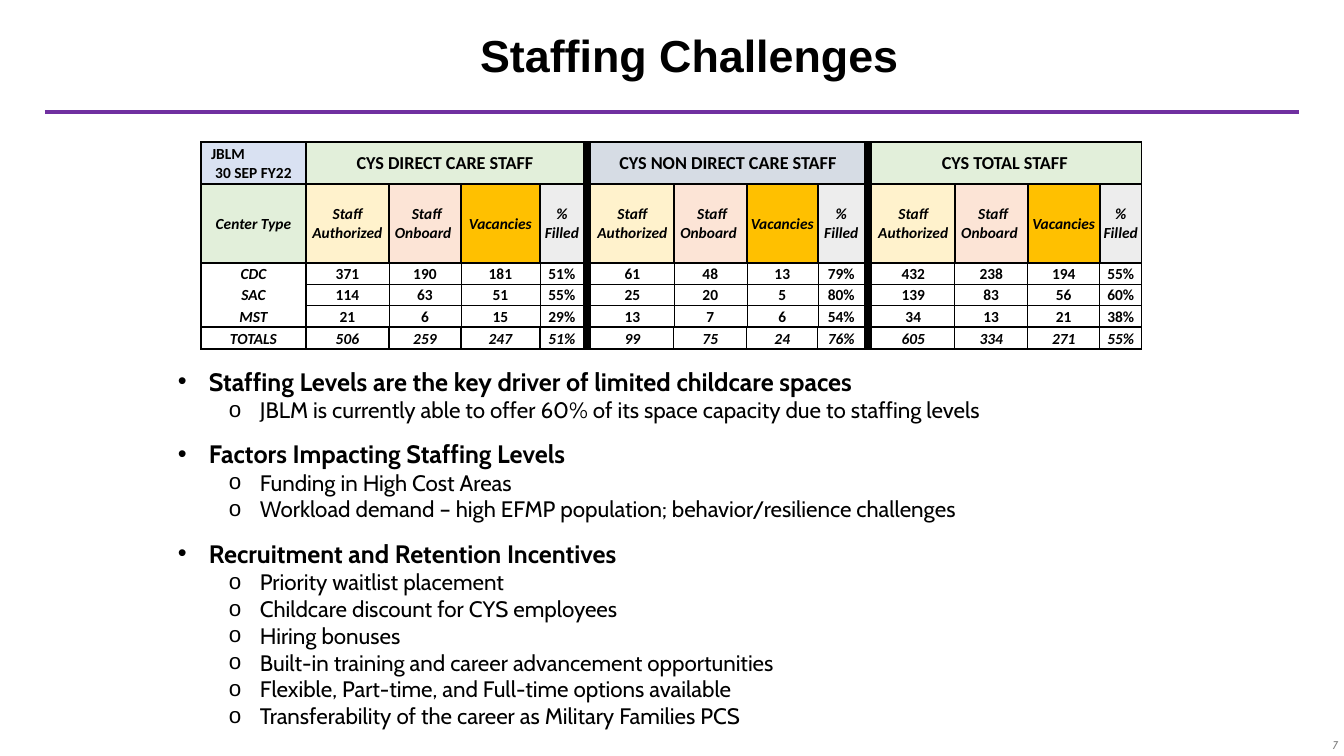
from lxml.etree import SubElement
from pptx import Presentation
from pptx.dml.color import RGBColor
from pptx.enum.shapes import MSO_CONNECTOR
from pptx.enum.text import MSO_ANCHOR, PP_ALIGN
from pptx.oxml import parse_xml
from pptx.oxml.ns import nsdecls, qn
from pptx.util import Emu, Pt

TITLE = "Staffing Challenges"
CORNER = ["JBLM", "30 SEP FY22"]
GROUPS = [("CYS DIRECT CARE STAFF", "green"),
          ("CYS NON DIRECT CARE STAFF", "slate"),
          ("CYS TOTAL STAFF ", "green")]
HEADS = [("Staff Authorized", "cream"), (" Staff Onboard ", "peach"),
         ("Vacancies", "gold"), ("% Filled", "gray")]
STAFF = [
    ("CDC", [(371, 190, 181, "51%"), (61, 48, 13, "79%"), (432, 238, 194, "55%")]),
    ("SAC", [(114, 63, 51, "55%"), (25, 20, 5, "80%"), (139, 83, 56, "60%")]),
    ("MST", [(21, 6, 15, "29%"), (13, 7, 6, "54%"), (34, 13, 21, "38%")]),
    ("TOTALS", [(506, 259, 247, "51%"), (99, 75, 24, "76%"), (605, 334, 271, "55%")]),
]
POINTS = [
    ("Staffing Levels are the key driver of limited childcare spaces",
     ["JBLM is currently able to offer 60% of its space capacity due to staffing levels"]),
    ("Factors Impacting Staffing Levels",
     ["Funding in High Cost Areas",
      "Workload demand – high EFMP population; behavior/resilience challenges"]),
    ("Recruitment and Retention Incentives",
     ["Priority waitlist placement",
      "Childcare discount for CYS employees",
      "Hiring bonuses",
      "Built-in training and career advancement opportunities",
      "Flexible, Part-time, and Full-time options available",
      "Transferability of the career as Military Families PCS"]),
]
WIDTHS = [105, 83, 72, 79, 44, 7, 83, 73, 71, 47, 7, 83, 73, 72, 42]
HEIGHTS = [42, 79, 21, 21, 22, 22]
STEP = len(HEADS) + 1
COLORS = {"black": "000000", "purple": "7030A0", "num": "808080",
          "blue": "D9E1F2", "green": "E2EFDA", "slate": "D6DCE4",
          "cream": "FFF2CC", "peach": "FCE4D6", "gold": "FFC000", "gray": "EDEDED"}
FONTS = {
    "title": dict(name="Arial", size=Pt(32), bold=True),
    "group": dict(name="Calibri", size=Pt(13), bold=True, italic=False),
    "corner": dict(name="Calibri", size=Pt(11), bold=True, italic=False),
    "label": dict(name="Calibri", size=Pt(11), bold=True, italic=True),
    "head": dict(name="Cabin", size=Pt(18), bold=True),
    "item": dict(name="Cabin", size=Pt(16), bold=False),
    "num": dict(name="Cabin", size=Pt(8), italic=True),
}
SCALE = 914400 / 100.8


def px(n):
    return Emu(round(n * SCALE))


def tint(name):
    return RGBColor.from_string(COLORS[name])


def apply(thing, values):
    for key, value in values.items():
        setattr(thing, key, value)


def place(shape, left, top, width, height):
    apply(shape, dict(left=px(left), top=px(top), width=px(width), height=px(height)))


def write(para, text, font, color="black", align=PP_ALIGN.CENTER):
    para.alignment = align
    run = para.add_run()
    run.text = text
    apply(run.font, FONTS[font])
    run.font.color.rgb = tint(color)


def add_box(slide, *area, **margins):
    frame = slide.shapes.add_textbox(*map(px, area)).text_frame
    frame.word_wrap = True
    apply(frame, margins)
    return frame


def mark(para, char, left):
    props = para._p.get_or_add_pPr()
    props.set("marL", str(px(left)))
    props.set("indent", str(-px(31)))
    SubElement(props, qn("a:buFont"), typeface="Arial")
    SubElement(props, qn("a:buChar"), char=char)


def is_bar(col):
    return col > 0 and col % STEP == 0


def side(row, edge):
    inner = edge % STEP not in (0, 1)
    if inner and row == 1:
        return 1.5
    return 0.5 if inner and 2 <= row <= 4 else 1


def level(edge, col):
    if edge in (3, 4):
        return 0 if col % STEP == 0 else 0.5
    return 1.5 if edge == 1 and col > STEP and not is_bar(col) else 1


def draw_edges(cell, row, col):
    sizes = dict(L=side(row, col), R=side(row, col + 1),
                 T=level(row, col), B=level(row + 1, col))
    props = cell._tc.get_or_add_tcPr()
    for place_at, (name, size) in enumerate(sizes.items()):
        paint = (f'<a:solidFill><a:srgbClr val="{COLORS["black"]}"/></a:solidFill>'
                 if size else "<a:noFill/>")
        props.insert(place_at, parse_xml(
            f'<a:ln{name} {nsdecls("a")} w="{Pt(size)}">{paint}</a:ln{name}>'))


def plan_cells():
    cells = {(1, 0): ("Center Type", "label", "green")}
    for row, (name, sets) in enumerate(STAFF, 2):
        last = name == "TOTALS"
        cells[row, 0] = (name, "label", None)
        for group, values in enumerate(sets):
            for col, value in enumerate(values, group * STEP + 1):
                cells[row, col] = (str(value), "label" if last else "corner", None)
    for group, (name, fill) in enumerate(GROUPS):
        start = group * STEP + 1
        cells[0, start] = (name, "group", fill)
        for col, (head, shade) in enumerate(HEADS, start):
            cells[1, col] = (head, "label", shade)
    return cells


def add_staff(slide):
    area = (201, 142, sum(WIDTHS), sum(HEIGHTS))
    table = slide.shapes.add_table(len(HEIGHTS), len(WIDTHS), *map(px, area)).table
    apply(table, dict(first_row=False, horz_banding=False))
    for col, width in zip(table.columns, WIDTHS):
        col.width = px(width)
    for row, height in zip(table.rows, HEIGHTS):
        row.height = px(height)
    cells = plan_cells()
    for row in range(len(HEIGHTS)):
        for col in range(len(WIDTHS)):
            cell = table.cell(row, col)
            apply(cell, dict(margin_left=px(1), margin_right=px(1), margin_top=px(1),
                             margin_bottom=0, vertical_anchor=MSO_ANCHOR.MIDDLE
                             if row < 2 else MSO_ANCHOR.BOTTOM))
            text, font, fill = cells.get((row, col), ("", "label", None))
            if is_bar(col):
                fill = "black"
            elif (row, col) == (0, 0):
                fill = "blue"
            if fill:
                cell.fill.solid()
                cell.fill.fore_color.rgb = tint(fill)
            else:
                cell.fill.background()
            para = cell.text_frame.paragraphs[0]
            if (row, col) == (0, 0):
                write(para, CORNER[0], "corner", align=PP_ALIGN.LEFT)
                para._p.get_or_add_pPr().set("marL", str(px(9)))
                write(cell.text_frame.add_paragraph(), CORNER[1], "corner")
            elif text:
                write(para, text, font)
            else:
                SubElement(para._p, qn("a:endParaRPr"), sz="800")
            draw_edges(cell, row, col)
    for group in range(len(GROUPS)):
        start = group * STEP + 1
        table.cell(0, start).merge(table.cell(0, start + len(HEADS) - 1))


def add_points(slide):
    frame = add_box(slide, 168, 361, 1008, 383)
    for group, (head, items) in enumerate(POINTS):
        para = frame.add_paragraph() if group else frame.paragraphs[0]
        mark(para, "•", 31)
        if group:
            para.space_before = Pt(11)
        write(para, head, "head", align=PP_ALIGN.LEFT)
        for item in items:
            para = frame.add_paragraph()
            para.level = 1
            mark(para, "o", 82)
            write(para, item, "item", align=PP_ALIGN.LEFT)


def main():
    deck = Presentation()
    apply(deck, dict(slide_width=px(1344), slide_height=px(756)))
    slide = deck.slides.add_slide(deck.slide_layouts[5])
    title = slide.shapes.title
    place(title, 191, 0, 997, 109)
    title.text_frame.vertical_anchor = MSO_ANCHOR.MIDDLE
    write(title.text_frame.paragraphs[0], TITLE, "title")
    rule = slide.shapes.add_connector(MSO_CONNECTOR.STRAIGHT, *map(px, (45, 112, 1299, 112)))
    rule.line.color.rgb = tint("purple")
    rule.line.width = Pt(3)
    SubElement(rule._element.spPr, qn("a:effectLst"))
    add_staff(slide)
    add_points(slide)
    frame = add_box(slide, 1288, 725, 50, 27, margin_left=0, margin_right=0,
                    margin_top=0, margin_bottom=0, vertical_anchor=MSO_ANCHOR.BOTTOM)
    write(frame.paragraphs[0], "7", "num", "num", PP_ALIGN.RIGHT)
    deck.save("out.pptx")


if __name__ == "__main__":
    main()
